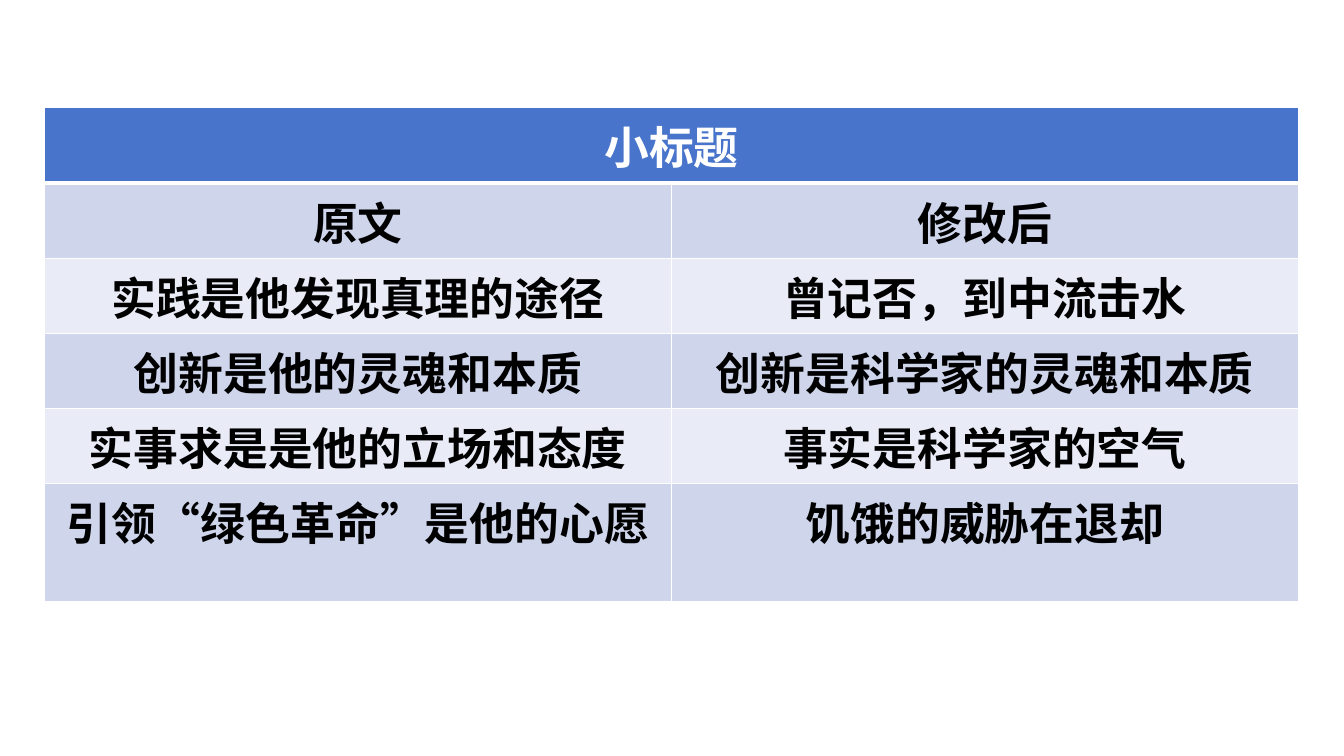
from lxml import etree
from pptx import Presentation
from pptx.dml.color import RGBColor
from pptx.enum import text
from pptx.oxml import ns
from pptx.util import Inches, Pt

HEADING = "小标题"
ROWS = [
    ("原文", "修改后"),
    ("实践是他发现真理的途径", "曾记否，到中流击水"),
    ("创新是他的灵魂和本质", "创新是科学家的灵魂和本质"),
    ("实事求是是他的立场和态度", "事实是科学家的空气"),
    ("引领“绿色革命”是他的心愿", "饥饿的威胁在退却"),
]


def color(value):
    return RGBColor.from_string(value)


class SlideBuilder:
    font = "Noto Sans CJK SC"
    size = 32
    white = "FFFFFF"
    black = "000000"
    header_fill = "4874CB"
    band_fills = ("CFD6EC", "E9EBF6")

    def __init__(self, presentation):
        self.slide = presentation.slides.add_slide(presentation.slide_layouts[6])

    def add_borders(self, cell, top=1, bottom=1):
        """Draw white borders, with widths in points; call before filling the cell."""
        properties = cell._tc.get_or_add_tcPr()
        for side, width in (("L", 1), ("R", 1), ("T", top), ("B", bottom)):
            line = etree.SubElement(properties, ns.qn(f"a:ln{side}"), w=str(Pt(width)))
            fill = etree.SubElement(line, ns.qn("a:solidFill"))
            etree.SubElement(fill, ns.qn("a:srgbClr"), val=self.white)

    def add_cell_text(self, cell, words, font_color):
        paragraph = cell.text_frame.paragraphs[0]
        paragraph.alignment = text.PP_ALIGN.CENTER
        run = paragraph.add_run()
        run.text = words
        run.font.name = self.font
        run.font.size = Pt(self.size)
        run.font.bold = True
        run.font.color.rgb = color(font_color)
        east_asian = etree.Element(ns.qn("a:ea"), typeface=self.font)
        run.font._element.find(ns.qn("a:latin")).addnext(east_asian)

    def add_comparison_table(self, heading, rows, left, top, width, row_height, last_height):
        count = len(rows) + 1
        height = row_height * (count - 1) + last_height
        table = self.slide.shapes.add_table(
            count, 2, Inches(left), Inches(top), Inches(width), Inches(height)
        ).table
        for row in table.rows:
            row.height = Inches(row_height)
        table.rows[count - 1].height = Inches(last_height)

        table.cell(0, 0).merge(table.cell(0, 1))
        for index, words in enumerate([(heading, ""), *rows]):
            is_header = index == 0
            fill = self.header_fill if is_header else self.band_fills[(index - 1) % 2]
            for column, entry in enumerate(words):
                cell = table.cell(index, column)
                self.add_borders(cell, top=3 if index == 1 else 1, bottom=3 if is_header else 1)
                cell.fill.solid()
                cell.fill.fore_color.rgb = color(fill)
                if entry:
                    self.add_cell_text(cell, entry, self.white if is_header else self.black)


def main():
    presentation = Presentation()
    presentation.slide_width = Inches(13.33)
    presentation.slide_height = Inches(7.5)
    builder = SlideBuilder(presentation)
    builder.add_comparison_table(
        HEADING, ROWS, left=0.44, top=1.07, width=12.44, row_height=0.64, last_height=1.17
    )
    presentation.save("out.pptx")


if __name__ == "__main__":
    main()
